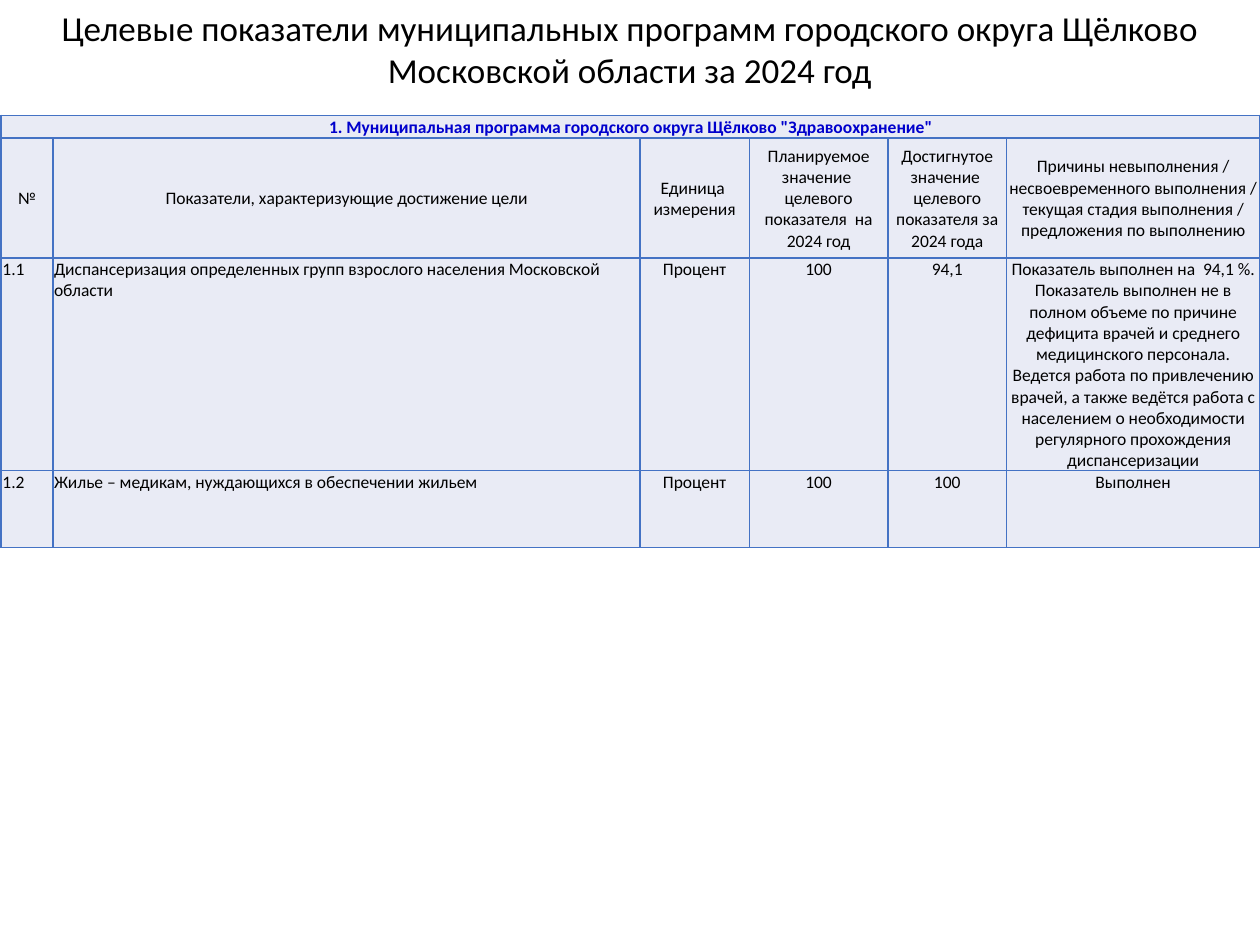
from lxml import etree
from pptx import Presentation
from pptx.dml.color import RGBColor
from pptx.enum import text
from pptx.oxml import ns
from pptx.util import Pt

BLACK = RGBColor(0x00, 0x00, 0x00)
HEADING_BLUE = RGBColor(0x00, 0x00, 0xCC)
BORDER_BLUE = RGBColor(0x44, 0x72, 0xC4)
CELL_FILL = RGBColor(0xE9, 0xEB, 0xF5)
FONT = "Calibri"

TITLE = ("Целевые показатели муниципальных программ городского округа Щёлково "
         "Московской области за 2024 год")
PROGRAM = '1. Муниципальная программа городского округа Щёлково "Здравоохранение"'
ROWS = [
    [PROGRAM, "", "", "", "", ""],
    ["№", "Показатели, характеризующие достижение цели", "Единица  измерения",
     "Планируемое значение  целевого показателя  на 2024 год",
     "Достигнутое значение  целевого показателя за 2024 года",
     "Причины невыполнения / несвоевременного выполнения / "
     "текущая стадия выполнения / предложения по выполнению"],
    ["1.1", "Диспансеризация определенных групп взрослого населения Московской области",
     "Процент", "100", "94,1",
     "Показатель выполнен на  94,1 %. Показатель выполнен не в полном объеме "
     "по причине дефицита врачей и среднего медицинского персонала. Ведется работа "
     "по привлечению врачей, а также ведётся работа с населением о необходимости "
     "регулярного прохождения диспансеризации"],
    ["1.2", "Жилье – медикам, нуждающихся в обеспечении жильем",
     "Процент", "100", "100", "Выполнен"],
]
COLUMN_WIDTHS = [29.5, 335.5, 62.5, 79.2, 67.8, 144.7]
ROW_HEIGHTS = [13, 68.4, 121.5, 44]


def add_run(paragraph, words, size, color, bold=False):
    run = paragraph.add_run()
    run.text = words
    run.font.name = FONT
    run.font.size = Pt(size)
    run.font.bold = bold
    run.font.color.rgb = color


def add_borders(cell):
    """Draw the four cell edges; they must precede the fill in the cell properties."""
    properties = cell._tc.get_or_add_tcPr()
    for position, edge in enumerate(("a:lnL", "a:lnR", "a:lnT", "a:lnB")):
        line = etree.Element(ns.qn(edge), w=str(Pt(1)))
        fill = etree.SubElement(line, ns.qn("a:solidFill"))
        etree.SubElement(fill, ns.qn("a:srgbClr"), val=str(BORDER_BLUE))
        properties.insert(position, line)


presentation = Presentation()
presentation.slide_width = Pt(720)
presentation.slide_height = Pt(540)
slide = presentation.slides.add_slide(presentation.slide_layouts[5])

title = slide.shapes.title
title.left, title.top, title.width, title.height = Pt(8.6), Pt(0), Pt(702.7), Pt(55.4)
title_frame = title.text_frame
title_frame.word_wrap = True
title_frame.auto_size = text.MSO_AUTO_SIZE.SHAPE_TO_FIT_TEXT
title_frame.vertical_anchor = text.MSO_ANCHOR.TOP
title_frame.paragraphs[0].alignment = text.PP_ALIGN.CENTER
add_run(title_frame.paragraphs[0], TITLE, 20, BLACK)

table = slide.shapes.add_table(
    len(ROWS), len(COLUMN_WIDTHS), Pt(0.7), Pt(66),
    Pt(sum(COLUMN_WIDTHS)), Pt(sum(ROW_HEIGHTS))).table
for column, width in zip(table.columns, COLUMN_WIDTHS):
    column.width = Pt(width)
for row, height in zip(table.rows, ROW_HEIGHTS):
    row.height = Pt(height)
table.cell(0, 0).merge(table.cell(0, len(COLUMN_WIDTHS) - 1))

for row_index, row_words in enumerate(ROWS):
    is_heading = row_index < 2
    is_program = row_index == 0
    for column_index, words in enumerate(row_words):
        cell = table.cell(row_index, column_index)
        cell.margin_left = cell.margin_right = cell.margin_top = Pt(0.7)
        cell.margin_bottom = Pt(0)
        cell.vertical_anchor = text.MSO_ANCHOR.MIDDLE if is_heading else text.MSO_ANCHOR.TOP
        cell.fill.solid()
        cell.fill.fore_color.rgb = CELL_FILL
        add_borders(cell)
        if words:
            paragraph = cell.text_frame.paragraphs[0]
            centered = is_heading or column_index > 1
            paragraph.alignment = text.PP_ALIGN.CENTER if centered else text.PP_ALIGN.LEFT
            add_run(paragraph, words, 10, HEADING_BLUE if is_program else BLACK, is_program)

presentation.save("out.pptx")
